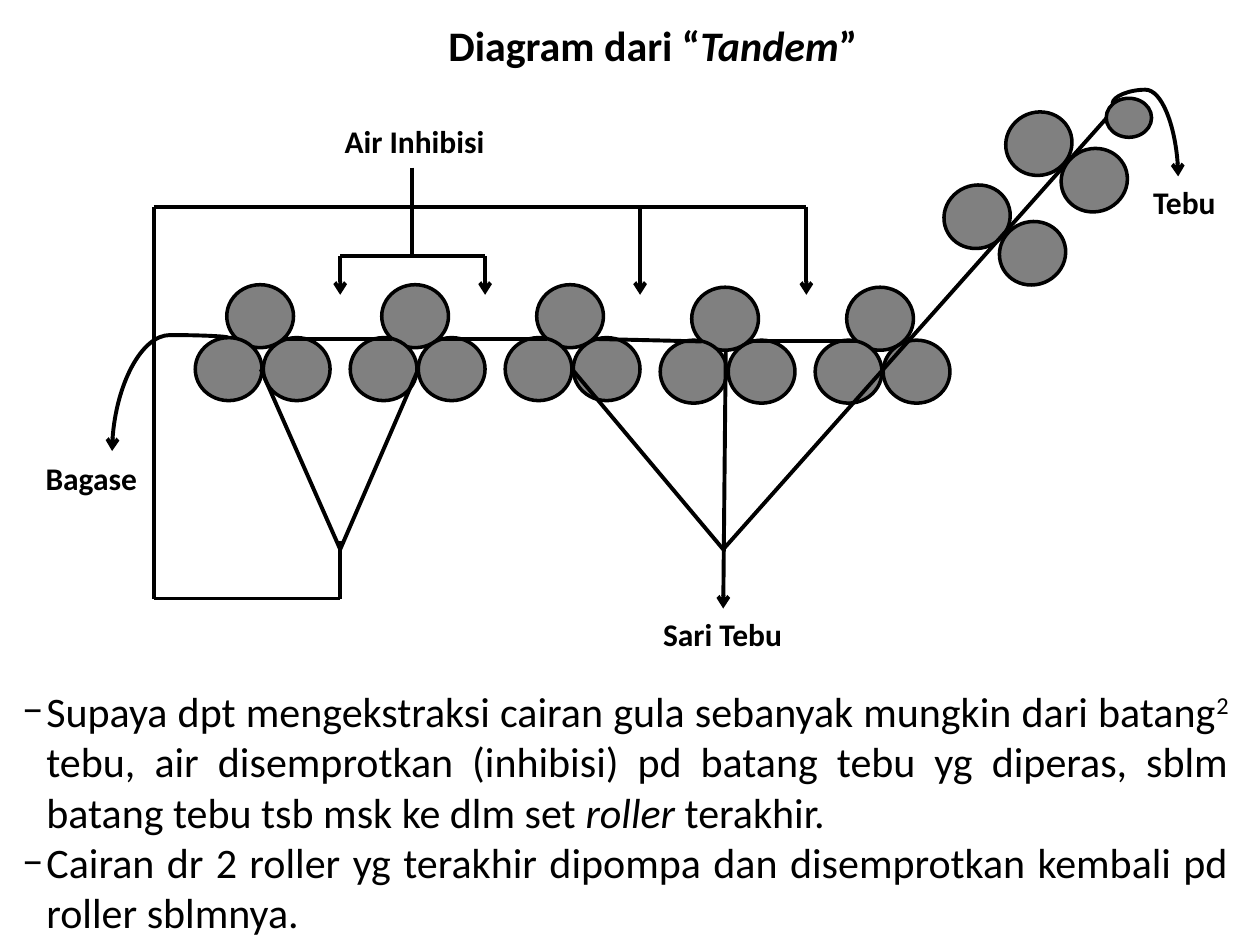
from pptx import Presentation
from pptx.dml.color import RGBColor
from pptx.enum.shapes import MSO_CONNECTOR, MSO_SHAPE
from pptx.enum.text import MSO_ANCHOR, PP_ALIGN
from pptx.oxml.ns import qn
from pptx.util import Inches, Pt
from lxml.etree import SubElement

BLACK = "000000"
GRAY = "808080"
ROLLER_SIZE = (0.53, 0.5)
MILL_PITCH = 1.23


def color(value):
    return RGBColor.from_string(value)


def add_line(slide, box, start, end, arrow=False, kind=MSO_CONNECTOR.STRAIGHT):
    left, top = box
    line = slide.shapes.add_connector(
        kind, Inches(left + start[0]), Inches(top + start[1]),
        Inches(left + end[0]), Inches(top + end[1]))
    line.line.color.rgb = color(BLACK)
    line.line.width = Pt(2.25)
    if arrow:
        SubElement(line.line._get_or_add_ln(), qn("a:tailEnd"), type="arrow")
    SubElement(line._element.spPr, qn("a:effectLst"))
    return line


def add_path(slide, box, points, arrow=False):
    for index, (start, end) in enumerate(zip(points, points[1:])):
        add_line(slide, box, start, end, arrow and index == len(points) - 2)


def add_curve(slide, box, start, end, bend):
    curve = add_line(slide, box, start, end, True, MSO_CONNECTOR.CURVE)
    properties = curve._element.spPr
    properties.find(qn("a:xfrm")).set("rot", str(270 * 60000))
    adjustments = properties.find(qn("a:prstGeom")).get_or_add_avLst()
    SubElement(adjustments, qn("a:gd"), name="adj1", fmla=f"val {bend}")


def add_roller(slide, left, top, size=ROLLER_SIZE, rotation=0):
    roller = slide.shapes.add_shape(
        MSO_SHAPE.FLOWCHART_CONNECTOR, Inches(left), Inches(top),
        Inches(size[0]), Inches(size[1]))
    roller.shadow.inherit = False
    roller.rotation = rotation
    roller.fill.solid()
    roller.fill.fore_color.rgb = color(GRAY)
    roller.line.color.rgb = color(BLACK)
    roller.line.width = Pt(2)


def add_runs(paragraph, runs, size, bold=False):
    for text, style in runs:
        run = paragraph.add_run()
        run.text = text
        run.font.name = "Calibri"
        run.font.size = Pt(size)
        run.font.bold = bold
        run.font.color.rgb = color(BLACK)
        run.font.italic = style == "italic"
        if style == "superscript":
            run.font._element.set("baseline", "30000")


def add_frame(slide, left, top, width, height, wrap=True):
    frame = slide.shapes.add_textbox(
        Inches(left), Inches(top), Inches(width), Inches(height)).text_frame
    frame.word_wrap = wrap
    return frame


def add_label(slide, text, left, top, width):
    paragraph = add_frame(slide, left, top, width, 0.4, False).paragraphs[0]
    paragraph.alignment = PP_ALIGN.CENTER
    add_runs(paragraph, [(text, None)], 18, True)


def add_title(slide, left, top, width, height):
    frame = add_frame(slide, left, top, width, height)
    frame.vertical_anchor = MSO_ANCHOR.MIDDLE
    paragraph = frame.paragraphs[0]
    paragraph.alignment = PP_ALIGN.CENTER
    add_runs(paragraph, [("Diagram dari “", None), ("Tandem", "italic"), ("”", None)],
             24, True)


def add_mills(slide, left, top):
    drops = [0, 0, 0, 0.02, 0.02]
    for index, drop in enumerate(drops):
        for x, y in [(0.25, 0), (0, 0.42), (0.54, 0.42)]:
            add_roller(slide, left + index * MILL_PITCH + x, top + drop + y)
    for index in range(len(drops) - 1):
        start = 0.7 + index * MILL_PITCH
        add_line(slide, (left, top), (start, 0.43 + drops[index]),
                 (start + 0.86, 0.43 + drops[index + 1]))


def add_roller_pair(slide, left, top):
    for x, y in [(0, 0), (0.44, 0.29)]:
        add_roller(slide, left + x, top + y, rotation=337.7)


def add_cane_feed(slide, left, top):
    add_roller_pair(slide, left + 1.75, top + 0.69)
    add_line(slide, (left, top), (0, 3.58), (3.04, 0.16))
    add_roller_pair(slide, left + 2.24, top + 0.11)
    add_roller(slide, left + 3.04, top, (0.36, 0.31))
    add_curve(slide, (left, top), (3.64, 0.07), (3.06, 0.59), -18700)
    add_label(slide, "Tebu", left + 3.29, top + 0.62, 0.74)


def add_juice_outlet(slide, left, top):
    box = (left, top)
    add_line(slide, box, (0, 0.15), (1.2, 1.58))
    add_line(slide, box, (1.22, 0), (1.2, 2.05), True)
    add_label(slide, "Sari Tebu", left + 0.54, top + 2.05, 1.31)


def add_recirculation(slide, left, top):
    box = (left, top)
    for start in [(0.85, 1.29), (2.1, 1.29)]:
        add_line(slide, box, start, (1.48, 2.72))
    add_path(slide, box, [(1.48, 2.65), (1.48, 3.11), (0, 3.11), (0, 0),
                          (5.18, 0), (5.18, 0.7)], True)
    add_line(slide, box, (3.86, 0), (3.86, 0.7), True)


def add_inhibition_water(slide, left, top):
    box = (left, top)
    add_label(slide, "Air Inhibisi", left - 0.11, top, 1.4)
    add_line(slide, box, (0.57, 0.41), (0.57, 1.11))
    add_line(slide, box, (0, 1.11), (1.15, 1.11))
    for x in (0, 1.15):
        add_line(slide, box, (x, 1.11), (x, 1.42), True)


def add_bagasse_outlet(slide, left, top):
    add_curve(slide, (left, top), (1.57, 0.92), (0.67, 0), -2300)
    add_label(slide, "Bagase", left, top + 0.92, 0.99)


def add_explanation(slide, left, top, width, height):
    frame = add_frame(slide, left, top, width, height)
    points = [
        [("Supaya dpt mengekstraksi cairan gula sebanyak mungkin dari batang", None),
         ("2", "superscript"),
         (" tebu, air disemprotkan (inhibisi) pd batang tebu yg diperas, "
          "sblm batang tebu tsb msk ke dlm set ", None),
         ("roller", "italic"), (" terakhir.", None)],
        [("Cairan dr 2 roller yg terakhir dipompa dan disemprotkan kembali "
          "pd roller sblmnya.", None)],
    ]
    for index, runs in enumerate(points):
        paragraph = frame.add_paragraph() if index else frame.paragraphs[0]
        paragraph.alignment = PP_ALIGN.JUSTIFY
        properties = paragraph._p.get_or_add_pPr()
        properties.set("marL", str(Inches(0.19)))
        properties.set("indent", str(-Inches(0.19)))
        SubElement(properties, qn("a:buFont"), typeface="Calibri")
        SubElement(properties, qn("a:buChar"), char="−")
        add_runs(paragraph, runs, 24)


def main():
    presentation = Presentation()
    presentation.slide_width = Inches(10)
    presentation.slide_height = Inches(7.5)
    slide = presentation.slides.add_slide(presentation.slide_layouts[6])
    add_title(slide, 3.44, 0.08, 3.48, 0.55)
    add_mills(slide, 1.55, 2.26)
    add_cane_feed(slide, 5.74, 0.78)
    add_juice_outlet(slide, 4.54, 2.78)
    add_recirculation(slide, 1.22, 1.64)
    add_inhibition_water(slide, 2.7, 0.92)
    add_bagasse_outlet(slide, 0.23, 2.67)
    add_explanation(slide, 0.08, 5.39, 9.77, 2.19)
    presentation.save("out.pptx")


if __name__ == "__main__":
    main()
